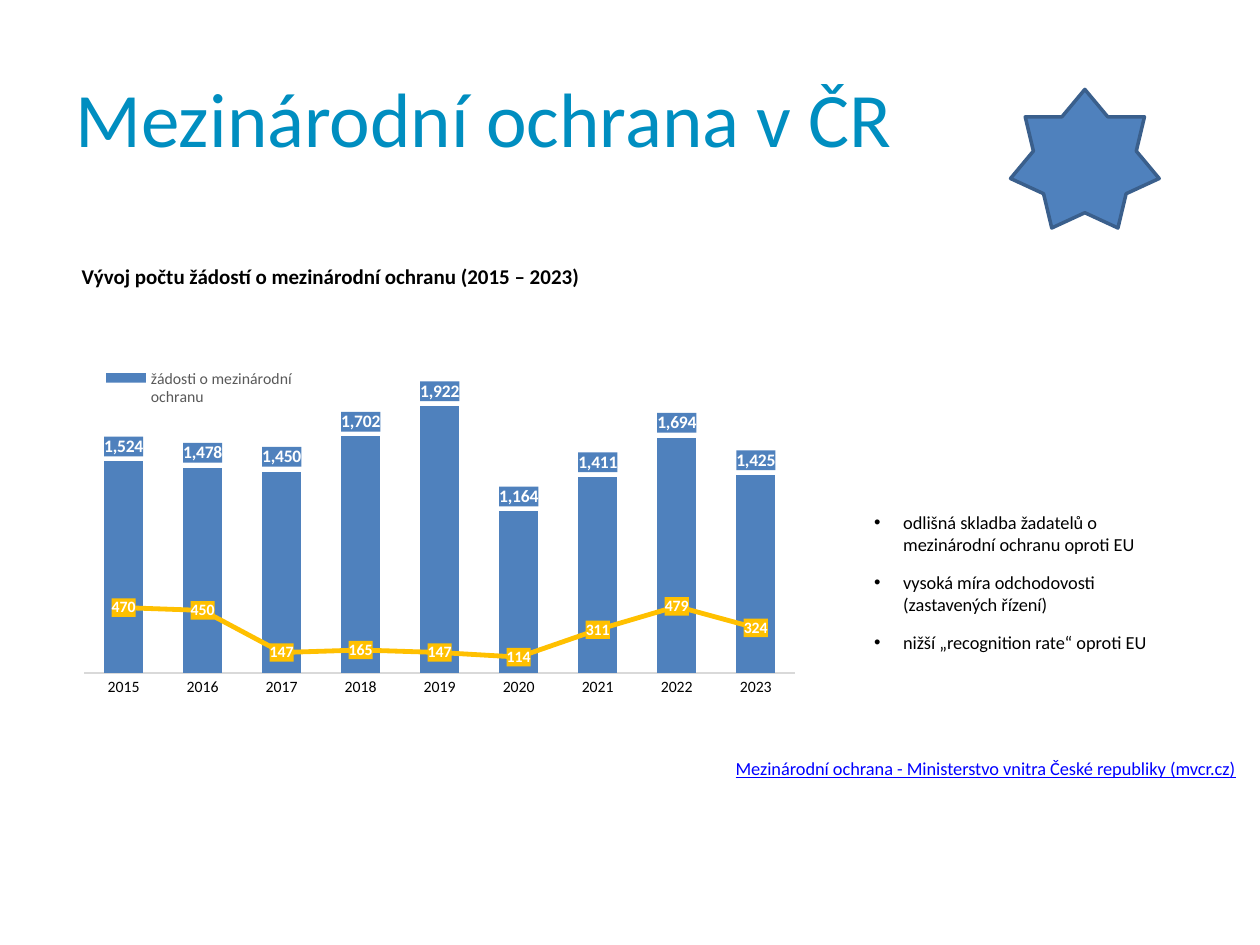
from lxml import etree
from pptx import Presentation
from pptx.chart.data import CategoryChartData
from pptx.dml.color import RGBColor
from pptx.enum.chart import XL_CHART_TYPE as CT, XL_LABEL_POSITION as LP
from pptx.enum.chart import XL_LEGEND_POSITION, XL_MARKER_STYLE, XL_TICK_MARK as TM, XL_TICK_LABEL_POSITION as TLP
from pptx.enum.shapes import MSO_SHAPE
from pptx.enum.text import MSO_ANCHOR, MSO_AUTO_SIZE, PP_ALIGN
from pptx.oxml import parse_xml
from pptx.oxml.ns import nsdecls, qn
from pptx.util import Inches, Pt

FONT = "Calibri"
BLUE, GOLD = "4F81BD", "FFC000"
TITLE = "Mezinárodní ochrana v ČR"
HEADING = "Vývoj počtu žádostí o mezinárodní ochranu (2015 – 2023)"
LINK = "Mezinárodní ochrana - Ministerstvo vnitra České republiky (mvcr.cz)"
POINTS = [
    "odlišná skladba žadatelů o mezinárodní ochranu oproti EU",
    "vysoká míra odchodovosti (zastavených řízení)",
    "nižší „recognition rate“ oproti EU",
]
YEARS = [str(y) for y in range(2015, 2024)]
SERIES = [
    ("žádosti o mezinárodní ochranu", [1524, 1478, 1450, 1702, 1922, 1164, 1411, 1694, 1425]),
    ("", [470, 450, 147, 165, 147, 114, 311, 479, 324]),
]


def rgb(value):
    return RGBColor.from_string(value)


def box(*lengths):
    return [Inches(v) for v in lengths]


def style(font, size, color="000000", bold=False, underline=None):
    font.name, font.size, font.bold = FONT, Pt(size), bold
    font.color.rgb = rgb(color)
    if underline:
        font.underline = True


def write(tf, lines, bullet=False, **fmt):
    tf.word_wrap = True
    for i, text in enumerate(lines):
        p = tf.paragraphs[0] if i == 0 else tf.add_paragraph()
        p.alignment = PP_ALIGN.LEFT
        r = p.add_run()
        r.text = text
        style(r.font, **fmt)
        if bullet:
            p.space_after = Pt(9)
            pPr = p._p.get_or_add_pPr()
            pPr.set("marL", str(Inches(0.23)))
            pPr.set("indent", str(-Inches(0.23)))
            etree.SubElement(pPr, qn("a:buFont"), typeface="Arial")
            etree.SubElement(pPr, qn("a:buChar"), char="•")


def add_text(s, at, lines, **fmt):
    tf = s.shapes.add_textbox(*box(*at)).text_frame
    write(tf, lines, **fmt)
    tf.auto_size = MSO_AUTO_SIZE.SHAPE_TO_FIT_TEXT


def chart_xml(tag, body):
    return parse_xml(f"<c:{tag} {nsdecls('c', 'a')}>{body}</c:{tag}>")


def layout(x, y, w, h, inner=False):
    target = '<c:layoutTarget val="inner"/>' if inner else ""
    modes = '<c:xMode val="edge"/><c:yMode val="edge"/>'
    sizes = "".join(f'<c:{k} val="{v}"/>' for k, v in zip("xywh", (x, y, w, h)))
    return chart_xml("layout", f"<c:manualLayout>{target}{modes}{sizes}</c:manualLayout>")


def drop(parent, tag):
    for el in parent.findall(qn(tag)):
        parent.remove(el)


def label(series, color, size, position):
    labels = series.data_labels
    labels.show_value = True
    labels.number_format, labels.number_format_is_linked = "#,##0", False
    labels.position = position
    style(labels.font, size, "FFFFFF", bold=True)
    fill = f'<a:solidFill><a:srgbClr val="{color}"/></a:solidFill>'
    labels._element.find(qn("c:txPr")).addprevious(chart_xml("spPr", fill))


def move_to_line(chart):
    bar = chart.plots[0]._element
    ser = bar.findall(qn("c:ser"))[1]
    drop(ser, "c:invertIfNegative")
    line = chart_xml("lineChart", '<c:grouping val="standard"/><c:varyColors val="0"/>')
    line.append(ser)
    etree.SubElement(line, qn("c:marker"), val="1")
    for ax in bar.findall(qn("c:axId")):
        etree.SubElement(line, qn("c:axId"), val=ax.get("val"))
    bar.addnext(line)


def add_requests_chart(s):
    data = CategoryChartData(number_format="#,##0")
    data.categories = YEARS
    for name, values in SERIES:
        data.add_series(name, values)
    chart = s.shapes.add_chart(CT.COLUMN_CLUSTERED, *box(0.55, 2.84, 5.88, 2.69), data).chart
    chart.has_title = False
    style(chart.font, 10)
    move_to_line(chart)

    columns, lines = chart.plots
    columns.gap_width = 100
    columns.vary_by_categories = False
    bars, line = columns.series[0], lines.series[0]
    bars.format.fill.solid()
    bars.format.fill.fore_color.rgb = rgb(BLUE)
    line.format.line.color.rgb = rgb(GOLD)
    line.format.line.width = Pt(2.75)
    line.marker.style = XL_MARKER_STYLE.NONE
    line.smooth = False
    label(bars, BLUE, 10, LP.OUTSIDE_END)
    label(line, GOLD, 9, LP.CENTER)

    cat, val = chart.category_axis, chart.value_axis
    cat.major_tick_mark = cat.minor_tick_mark = TM.NONE
    cat.tick_label_position = TLP.NEXT_TO_AXIS
    cat.format.line.color.rgb = rgb("D9D9D9")
    cat.format.line.width = Pt(1)
    style(cat.tick_labels.font, 9)
    val.minimum_scale, val.maximum_scale, val.major_unit = 0, 2000, 500
    val.has_major_gridlines = False
    val.visible = False

    chart.has_legend = True
    legend = chart.legend
    legend.position = XL_LEGEND_POSITION.BOTTOM
    legend.include_in_layout = False
    style(legend.font, 9, "595959")
    drop(legend._element, "c:layout")
    pos = legend._element.find(qn("c:legendPos"))
    pos.addnext(layout(0.03, 0.02, 0.29, 0.14))
    pos.addnext(chart_xml("legendEntry", '<c:idx val="1"/><c:delete val="1"/>'))

    area = columns._element.getparent()
    drop(area, "c:layout")
    area.insert(0, layout(0.02, 0.11, 0.96, 0.82, inner=True))


def main():
    prs = Presentation()
    prs.slide_width, prs.slide_height = box(10, 7.5)
    s = prs.slides.add_slide(prs.slide_layouts[5])
    title = s.shapes.title
    title.left, title.top, title.width, title.height = box(0.5, 0.3, 9, 1.25)
    title.text_frame.vertical_anchor = MSO_ANCHOR.MIDDLE
    write(title.text_frame, [TITLE], size=44, color="008EC0")
    add_text(s, (0.55, 2.04, 5.19, 0.3), [HEADING], size=12, bold=True)
    add_requests_chart(s)
    add_text(s, (6.84, 4.01, 2.47, 1.24), POINTS, bullet=True, size=10.5)
    add_text(s, (5.74, 5.96, 5, 0.28), [LINK], size=10.5, color="0000FF", underline=True)
    star = s.shapes.add_shape(MSO_SHAPE.STAR_7_POINT, *box(8.02, 0.71, 1.18, 1.1))
    star.shadow.inherit = False
    star.fill.solid()
    star.fill.fore_color.rgb = rgb(BLUE)
    star.line.color.rgb = rgb("3A5F8C")
    star.line.width = Pt(2)
    prs.save("out.pptx")


if __name__ == "__main__":
    main()
